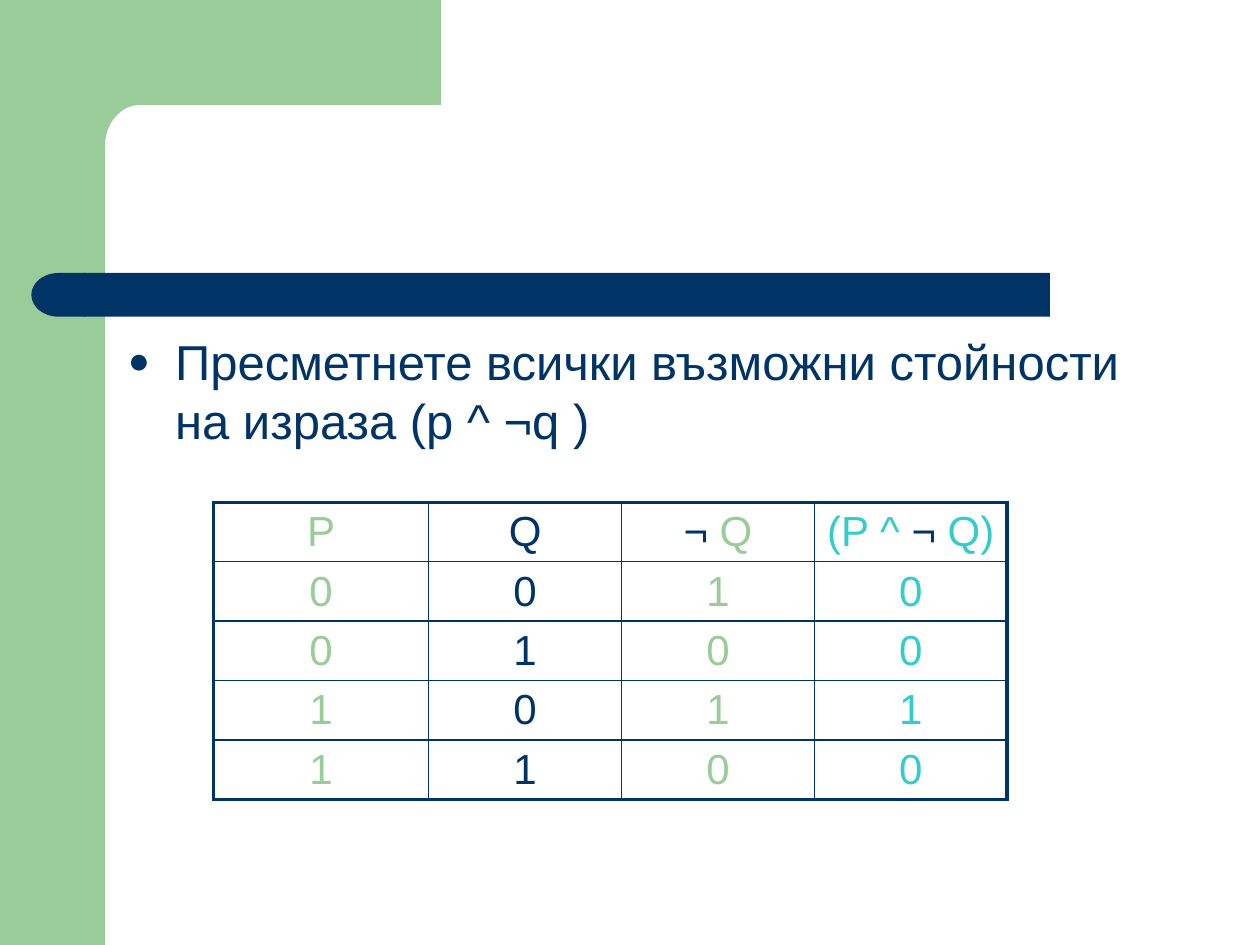
import math
from dataclasses import dataclass

import pptx
import pptx.dml.color
import pptx.enum.shapes
import pptx.enum.text
import pptx.oxml
import pptx.oxml.ns
import pptx.util

Pt = pptx.util.Pt
Kind = pptx.enum.shapes.MSO_SHAPE

NAVY, GREEN, TEAL = "003366", "99CC99", "33CCCC"
FONT = "Arial"
THIN, THICK = 1, 2.25


@dataclass
class Band:
    kind: int
    left: float
    top: float
    width: float
    height: float
    fill: str
    square: bool = False
    flipped: bool = False


@dataclass
class Piece:
    text: str
    color: str


def rgb(value: str) -> pptx.dml.color.RGBColor:
    return pptx.dml.color.RGBColor.from_string(value)


def apply(target, values: dict) -> None:
    for name, value in values.items():
        setattr(target, name, value)


def paint(shape, color: str) -> None:
    shape.shadow.inherit = False
    shape.fill.solid()
    shape.fill.fore_color.rgb = rgb(color)
    shape.line.fill.background()


def draw_band(slide, band: Band) -> None:
    shape = slide.shapes.add_shape(
        band.kind, Pt(band.left), Pt(band.top), Pt(band.width), Pt(band.height))
    paint(shape, band.fill)
    if band.square:
        shape.adjustments[0] = 0
    if band.flipped:
        shape._element.spPr.xfrm.set("flipH", "1")


def draw_corner(slide) -> None:
    """Top block whose inner corner is a quarter ellipse."""
    center_x, center_y, radius_x, radius_y, steps = 80, 83.5, 20, 23.5, 16
    angles = [math.pi / 2 * step / steps for step in range(steps + 1)]
    curve = [(center_x - radius_x * math.sin(a), center_y - radius_y * math.cos(a))
             for a in angles]
    outline = [(252, 60), *curve, (60, 92), (36, 92), (36, 0)]
    builder = slide.shapes.build_freeform(Pt(252), Pt(0), scale=1.0)
    builder.add_line_segments([(Pt(x), Pt(y)) for x, y in outline], close=True)
    paint(builder.convert_to_shape(), GREEN)


def write(paragraph, pieces: list[Piece], size: float) -> None:
    for piece in pieces:
        run = paragraph.add_run()
        run.text = piece.text
        apply(run.font, {"name": FONT, "size": Pt(size)})
        run.font.color.rgb = rgb(piece.color)


def add_bullet(paragraph, color: str, indent: float) -> None:
    properties = paragraph._p.get_or_add_pPr()
    properties.set("marL", str(Pt(indent)))
    properties.set("indent", str(Pt(-indent)))
    namespace = pptx.oxml.ns.nsdecls("a")
    for xml in (f'<a:buClr {namespace}><a:srgbClr val="{color}"/></a:buClr>',
                f'<a:buSzPct {namespace} val="75000"/>',
                f'<a:buFont {namespace} typeface="{FONT}"/>',
                f'<a:buChar {namespace} char="●"/>'):
        properties.append(pptx.oxml.parse_xml(xml))


def add_borders(cell, widths: dict[str, float]) -> None:
    properties = cell._tc.get_or_add_tcPr()
    namespace = pptx.oxml.ns.nsdecls("a")
    for position, (side, width) in enumerate(widths.items()):
        properties.insert(position, pptx.oxml.parse_xml(
            f'<a:ln{side} {namespace} w="{Pt(width)}"><a:solidFill>'
            f'<a:srgbClr val="{NAVY}"/></a:solidFill></a:ln{side}>'))


def draw_task(slide) -> None:
    box = slide.shapes.add_textbox(Pt(66), Pt(186), Pt(605.5), Pt(293))
    box.text_frame.word_wrap = True
    task = box.text_frame.paragraphs[0]
    add_bullet(task, NAVY, 27)
    write(task, [Piece("Пресметнете всички възможни стойности на израза (p ^ ¬q )", NAVY)], 28)


def draw_truth_table(slide) -> None:
    column_colors = [GREEN, NAVY, GREEN, TEAL]
    header = [
        [Piece("P", GREEN)],
        [Piece("Q", NAVY)],
        [Piece("¬", NAVY), Piece(" Q", GREEN)],
        [Piece("(P ^ ", TEAL), Piece("¬", NAVY), Piece(" Q)", TEAL)],
    ]
    values = ["0010", "0100", "1011", "1100"]
    rows = [header] + [[[Piece(digit, color)] for digit, color in zip(line, column_colors)]
                       for line in values]
    widths, row_height = [123, 110.2, 110.2, 110.2], 34
    margins = {"margin_left": Pt(7), "margin_right": Pt(7), "margin_bottom": Pt(1.5)}
    table = slide.shapes.add_table(
        len(rows), len(widths), Pt(122), Pt(287),
        Pt(sum(widths)), Pt(row_height * len(rows))).table
    apply(table, {"first_row": False, "horz_banding": False})
    for column, width in zip(table.columns, widths):
        column.width = Pt(width)
    last_row, last_column = len(rows) - 1, len(widths) - 1
    for r, row in enumerate(rows):
        table.rows[r].height = Pt(row_height)
        for c, pieces in enumerate(row):
            cell = table.cell(r, c)
            apply(cell, margins)
            cell.fill.background()
            add_borders(cell, {
                "L": THICK if c == 0 else THIN,
                "R": THICK if c == last_column else THIN,
                "T": THICK if r == 0 else THIN,
                "B": THICK if r == last_row else THIN,
            })
            paragraph = cell.text_frame.paragraphs[0]
            paragraph.alignment = pptx.enum.text.PP_ALIGN.CENTER
            write(paragraph, pieces, 24)


def main() -> None:
    deck = pptx.Presentation()
    apply(deck, {"slide_width": Pt(720), "slide_height": Pt(540)})
    slide = deck.slides.add_slide(deck.slide_layouts[6])

    # Green frame
    draw_band(slide, Band(Kind.RECTANGLE, 0, 0, 60, 540, GREEN))
    draw_corner(slide)

    # Navy title bar with a rounded left end
    draw_band(slide, Band(Kind.ROUNDED_RECTANGLE, 48, 156, 552, 25, NAVY, square=True))
    draw_band(slide, Band(Kind.FLOWCHART_DELAY, 18, 156, 31, 25, NAVY, flipped=True))

    # Task and its truth table
    draw_task(slide)
    draw_truth_table(slide)

    deck.save("out.pptx")


if __name__ == "__main__":
    main()
